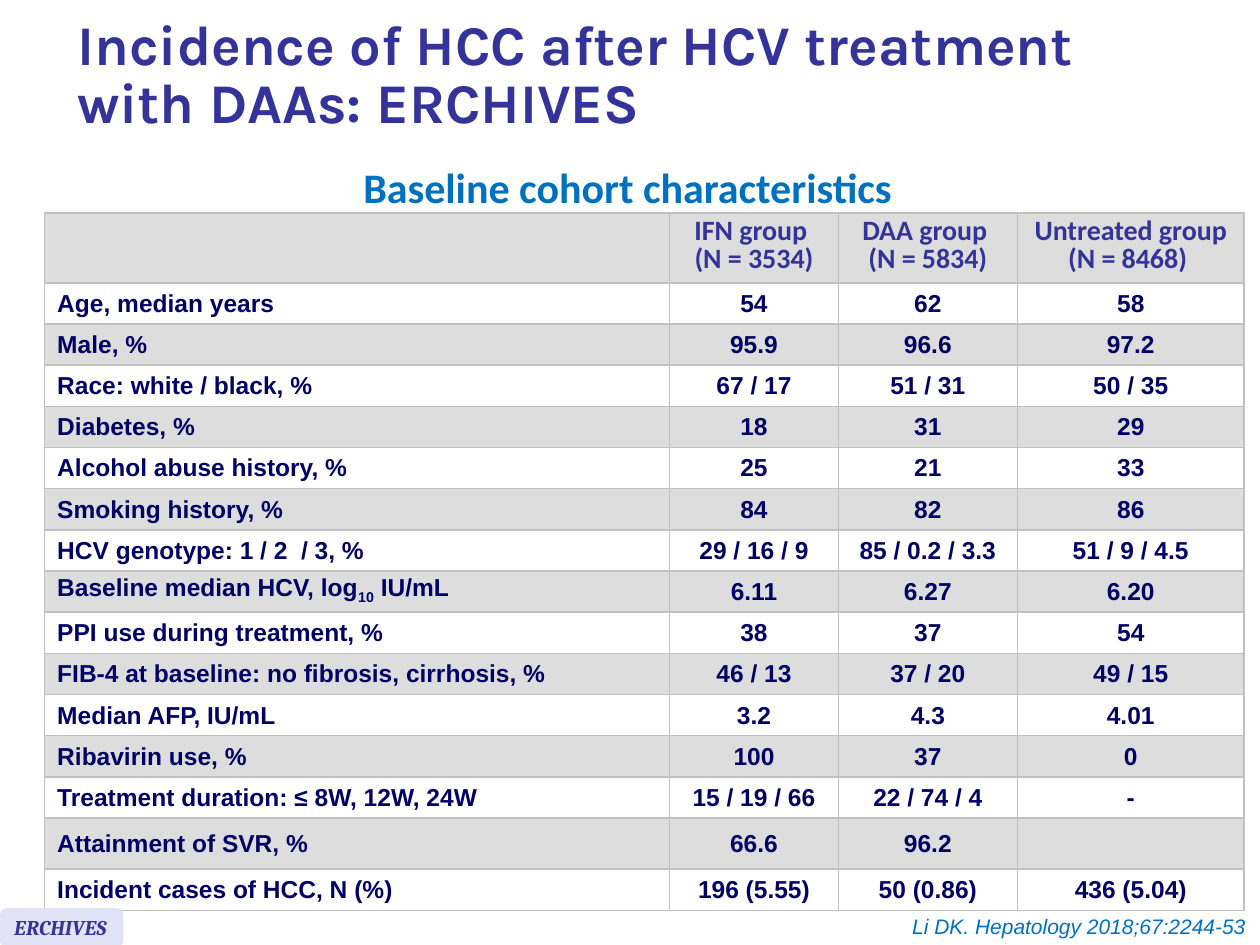
import pptx
import pptx.util
import pptx.dml.color
import pptx.enum.shapes
import pptx.enum.text
from lxml import etree

Cm, Pt = pptx.util.Cm, pptx.util.Pt
ALIGN = pptx.enum.text.PP_ALIGN
ANCHOR = pptx.enum.text.MSO_ANCHOR
A = "http://schemas.openxmlformats.org/drawingml/2006/main"

# Content
TITLE = "Incidence of HCC after HCV treatment with DAAs: ERCHIVES"
SUBTITLE = "Baseline cohort characteristics"
STUDY = "ERCHIVES"
CITATION = "Li DK. Hepatology 2018;67:2244-53"
HEADER = [[], ["IFN group ", "(N = 3534)"], ["DAA group ", "(N = 5834)"],
          ["Untreated group (N = 8468) "]]
# A tuple label holds normal, subscript and normal text
ROWS = [
    ("Age, median years", "54", "62", "58"),
    ("Male, %", "95.9", "96.6", "97.2"),
    ("Race: white / black, %", "67 / 17", "51 / 31", "50 / 35"),
    ("Diabetes, %", "18", "31", "29"),
    ("Alcohol abuse history, %", "25", "21", "33"),
    ("Smoking history, %", "84", "82", "86"),
    ("HCV genotype: 1 / 2  / 3, %", "29 / 16 / 9", "85 / 0.2 / 3.3", "51 / 9 / 4.5"),
    (("Baseline median HCV, log", "10", " IU/mL"), "6.11", "6.27", "6.20"),
    ("PPI use during treatment, %", "38", "37", "54"),
    ("FIB-4 at baseline: no fibrosis, cirrhosis, %", "46 / 13", "37 / 20", "49 / 15"),
    ("Median AFP, IU/mL", "3.2", "4.3", "4.01"),
    ("Ribavirin use, %", "100", "37", "0"),
    ("Treatment duration: ≤ 8W, 12W, 24W", "15 / 19 / 66", "22 / 74 / 4", "-"),
    ("Attainment of SVR, %", "66.6", "96.2", ""),
    ("Incident cases of HCC, N (%)", "196 (5.55)", "50 (0.86)", "436 (5.04)"),
]
COL_WIDTHS = [12.6, 3.4, 3.61, 4.57]
HEADER_HEIGHT, ROW_HEIGHT = 1.41, 0.83
INDIGO, NAVY, BLUE = "333399", "000066", "0070C0"
GREY, WHITE, BORDER, LILAC = "DDDDDD", "FFFFFF", "C0C0C0", "E2E2F6"


def rgb(value):
    return pptx.dml.color.RGBColor.from_string(value)


def add_run(p, text, font, size, color, bold=False, italic=False):
    r = p.add_run()
    r.text = text
    r.font.name, r.font.size = font, Pt(size)
    r.font.bold, r.font.italic = bold, italic
    r.font.color.rgb = rgb(color)
    return r


def add_text_box(s, left, top, width, height, align):
    tf = s.shapes.add_textbox(Cm(left), Cm(top), Cm(width), Cm(height)).text_frame
    tf.word_wrap = False
    p = tf.paragraphs[0]
    p.alignment = align
    return p


def format_cell(cell, fill):
    cell.vertical_anchor = ANCHOR.MIDDLE
    tc_pr = cell._tc.get_or_add_tcPr()
    for side in ("lnL", "lnR", "lnT", "lnB"):
        ln = etree.SubElement(tc_pr, f"{{{A}}}{side}", w=str(Pt(1)))
        solid = etree.SubElement(ln, f"{{{A}}}solidFill")
        etree.SubElement(solid, f"{{{A}}}srgbClr", val=BORDER)
    cell.fill.solid()
    cell.fill.fore_color.rgb = rgb(fill)


def format_paragraph(p, align):
    p.alignment = align
    p.line_spacing = Pt(16.2)
    return p


prs = pptx.Presentation()
prs.slide_width, prs.slide_height = Cm(25.4), Cm(19.05)
s = prs.slides.add_slide(prs.slide_layouts[5])

# Title
title = s.shapes.title
title.left, title.top, title.width, title.height = Cm(1.3), Cm(0.2), Cm(23.1), Cm(2.72)
tf = title.text_frame
tf.word_wrap = True
tf.auto_size = pptx.enum.text.MSO_AUTO_SIZE.NONE
tf.vertical_anchor = ANCHOR.MIDDLE
p = tf.paragraphs[0]
p.alignment, p.line_spacing = ALIGN.LEFT, 0.85
add_run(p, TITLE, "Karla", 32, INDIGO, bold=True)

# Cohort table
table = s.shapes.add_table(len(ROWS) + 1, len(COL_WIDTHS), Cm(0.9), Cm(4.29),
                           Cm(sum(COL_WIDTHS)),
                           Cm(HEADER_HEIGHT + ROW_HEIGHT * len(ROWS))).table
for column, width in zip(table.columns, COL_WIDTHS):
    column.width = Cm(width)
for i, row in enumerate(table.rows):
    row.height = Cm(ROW_HEIGHT if i else HEADER_HEIGHT)
    for cell in row.cells:
        format_cell(cell, WHITE if i % 2 else GREY)

for c, lines in enumerate(HEADER):
    tf = table.cell(0, c).text_frame
    for n, line in enumerate(lines):
        p = tf.add_paragraph() if n else tf.paragraphs[0]
        add_run(format_paragraph(p, ALIGN.CENTER), line, "Calibri", 16, INDIGO, bold=True)

for i, values in enumerate(ROWS, 1):
    for c, value in enumerate(values):
        p = format_paragraph(table.cell(i, c).text_frame.paragraphs[0],
                             ALIGN.CENTER if c else ALIGN.LEFT)
        parts = value if isinstance(value, tuple) else (value,)
        for n, part in enumerate(parts):
            if part:
                r = add_run(p, part, "Arial", 14, NAVY, bold=True)
                if n == 1:
                    r.font._element.set("baseline", "-25000")

# Table heading
p = add_text_box(s, 6.99, 3.61, 11.33, 0.89, ALIGN.CENTER)
p.line_spacing = Pt(15.2)
add_run(p, SUBTITLE, "Calibri", 24, BLUE, bold=True)

# Study badge
badge = s.shapes.add_shape(pptx.enum.shapes.MSO_SHAPE.ROUNDED_RECTANGLE,
                           Cm(0), Cm(18.31), Cm(2.49), Cm(0.78))
badge.shadow.inherit = False
badge.fill.solid()
badge.fill.fore_color.rgb = rgb(LILAC)
badge.line.fill.background()
tf = badge.text_frame
tf.word_wrap = False
tf.vertical_anchor = ANCHOR.MIDDLE
p = tf.paragraphs[0]
p.alignment = ALIGN.LEFT
add_run(p, STUDY, "Cambria", 12, INDIGO, bold=True, italic=True)

# Citation
p = add_text_box(s, 17.98, 18.29, 7.39, 0.76, ALIGN.RIGHT)
add_run(p, CITATION, "Arial", 12, BLUE, italic=True)

prs.save("out.pptx")
